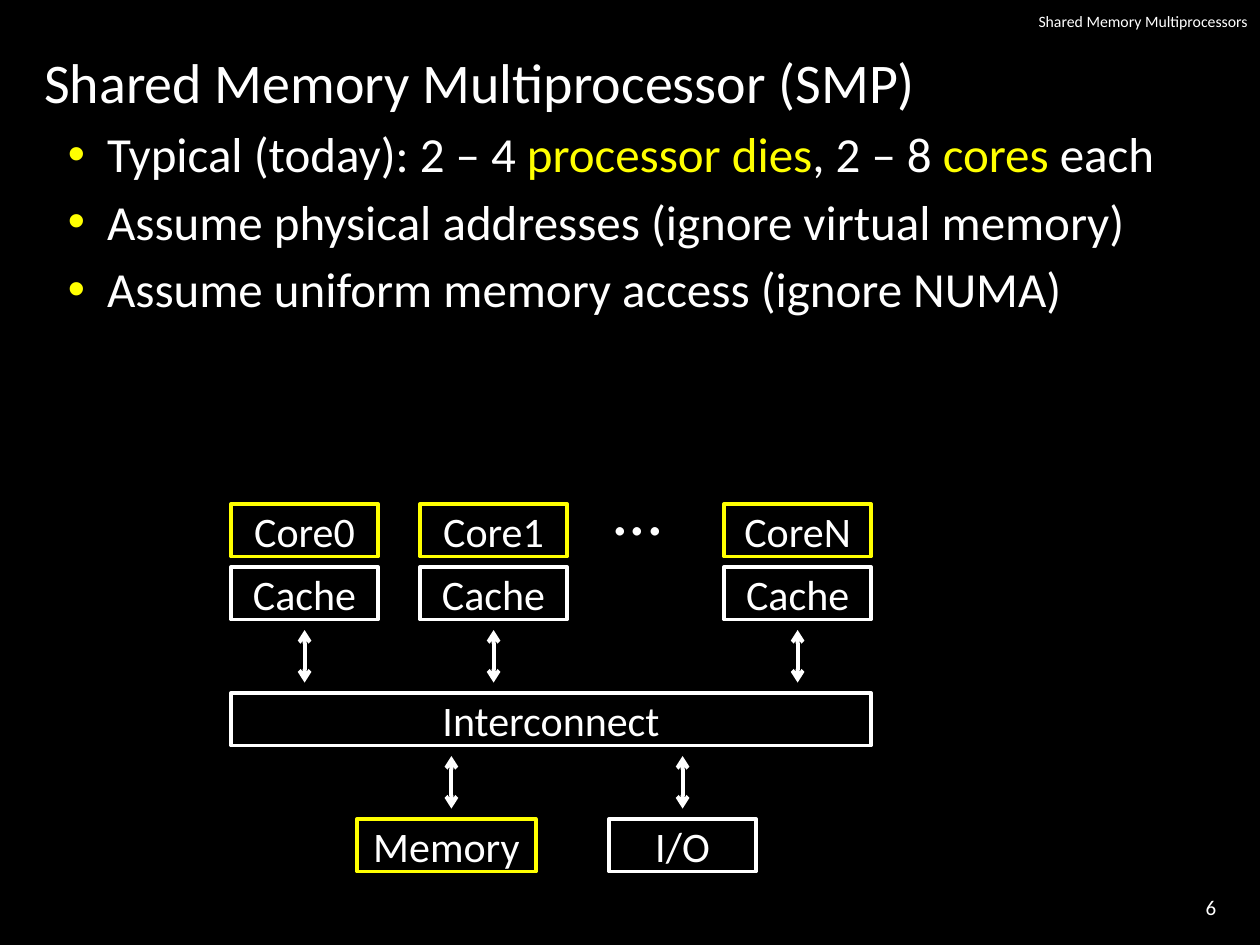
from lxml.etree import SubElement
from pptx import Presentation
from pptx.dml.color import RGBColor
from pptx.enum.shapes import MSO_CONNECTOR, MSO_SHAPE
from pptx.enum.text import MSO_ANCHOR as Anchor, PP_ALIGN as Align
from pptx.oxml.ns import qn
from pptx.util import Cm, Pt

WHITE, YELLOW, BLACK = "FFFFFF", "FFFF00", "000000"
FONT = "Calibri"

RUNNING_TITLE = "Shared Memory Multiprocessors"
HEADING = "Shared Memory Multiprocessor (SMP)"
BULLETS = [
    [("Typical (today): 2 – 4 ", WHITE), ("processor dies", YELLOW),
     (", 2 – 8 ", WHITE), ("cores", YELLOW), (" each", WHITE)],
    [("Assume physical addresses (ignore virtual memory)", WHITE)],
    [("Assume uniform memory access (ignore NUMA)", WHITE)],
]
PAGE_NUMBER = "6"

# Diagram, in centimetres
CORES = [("Core0", 4.66), ("Core1", 8.47), ("CoreN", 14.6)]
DEVICES = [("Memory", 7.2, 3.6, YELLOW), ("I/O", 12.28, 2.96, WHITE)]
DEVICE_ARROWS = [9.1, 13.76]
BOX_WIDTH, BOX_HEIGHT = 2.96, 1.06
TOP, ROW_STEP = 10.16, 1.27


def color(hex_text):
    return RGBColor.from_string(hex_text)


def row_top(row):
    return TOP + row * ROW_STEP


def add_run(paragraph, text, size, font_color=WHITE):
    run = paragraph.add_run()
    run.text = text
    run.font.name = FONT
    run.font.size = Pt(size)
    run.font.color.rgb = color(font_color)


def write(shape, text, size=24, align=Align.CENTER, anchor=Anchor.MIDDLE, wrap=True):
    frame = shape.text_frame
    frame.word_wrap = wrap
    frame.vertical_anchor = anchor
    paragraph = frame.paragraphs[0]
    paragraph.alignment = align
    add_run(paragraph, text, size)


def add_text_box(slide, left, top, width, height, text, **text_format):
    shape = slide.shapes.add_textbox(Cm(left), Cm(top), Cm(width), Cm(height))
    write(shape, text, **text_format)
    return shape


def add_box(slide, text, left, row, width=BOX_WIDTH, line_color=WHITE):
    shape = slide.shapes.add_shape(MSO_SHAPE.RECTANGLE, Cm(left), Cm(row_top(row)),
                                   Cm(width), Cm(BOX_HEIGHT))
    shape.shadow.inherit = False
    shape.fill.background()
    shape.line.color.rgb = color(line_color)
    shape.line.width = Pt(2.25)
    write(shape, text)


def add_double_arrow(slide, x, row):
    top = row_top(row)
    connector = slide.shapes.add_connector(MSO_CONNECTOR.STRAIGHT, Cm(x), Cm(top),
                                           Cm(x), Cm(top + BOX_HEIGHT))
    connector.line.color.rgb = color(WHITE)
    connector.line.width = Pt(2.25)
    line = connector.line._get_or_add_ln()
    for end in ("a:headEnd", "a:tailEnd"):
        SubElement(line, qn(end), type="arrow")
    SubElement(connector._element.spPr, qn("a:effectLst"))


def add_bullet(frame, runs):
    paragraph = frame.add_paragraph()
    paragraph.level = 1
    paragraph.space_before = Pt(5)
    properties = paragraph._p.get_or_add_pPr()
    properties.set("marL", str(Cm(1.27)))
    properties.set("indent", str(Cm(-0.79)))
    bullet_color = SubElement(properties, qn("a:buClr"))
    SubElement(bullet_color, qn("a:srgbClr"), val=YELLOW)
    SubElement(properties, qn("a:buFont"), typeface="Arial")
    SubElement(properties, qn("a:buChar"), char="•")
    for text, font_color in runs:
        add_run(paragraph, text, 28, font_color)


def add_texts(slide):
    title = slide.shapes.title
    title.left, title.top, title.width, title.height = Cm(15.67), Cm(0), Cm(9.73), Cm(0.84)
    write(title, RUNNING_TITLE, size=9, align=Align.RIGHT)
    body = add_text_box(slide, 0.64, 0.84, 24.13, 5.72, HEADING,
                        size=32, align=Align.LEFT, anchor=Anchor.TOP)
    for runs in BULLETS:
        add_bullet(body.text_frame, runs)
    add_text_box(slide, 22.66, 17.78, 2.11, 1.02, PAGE_NUMBER, size=12, align=Align.RIGHT)


def add_diagram(slide):
    for name, left in CORES:
        add_box(slide, name, left, 0, line_color=YELLOW)
        add_box(slide, "Cache", left, 1)
        add_double_arrow(slide, left + BOX_WIDTH / 2, 2)
    add_text_box(slide, 12.07, 9.25, 1.6, 1.96, "...", size=40,
                 align=Align.LEFT, anchor=Anchor.TOP, wrap=False)

    first_left, last_left = CORES[0][1], CORES[-1][1]
    add_box(slide, "Interconnect", first_left, 3, width=last_left + BOX_WIDTH - first_left)
    for x in DEVICE_ARROWS:
        add_double_arrow(slide, x, 4)
    for name, left, width, line_color in DEVICES:
        add_box(slide, name, left, 5, width, line_color)


def main():
    presentation = Presentation()
    presentation.slide_width, presentation.slide_height = Cm(25.4), Cm(19.05)
    slide = presentation.slides.add_slide(presentation.slide_layouts[5])
    slide.background.fill.solid()
    slide.background.fill.fore_color.rgb = color(BLACK)
    add_texts(slide)
    add_diagram(slide)
    presentation.save("out.pptx")


if __name__ == "__main__":
    main()
